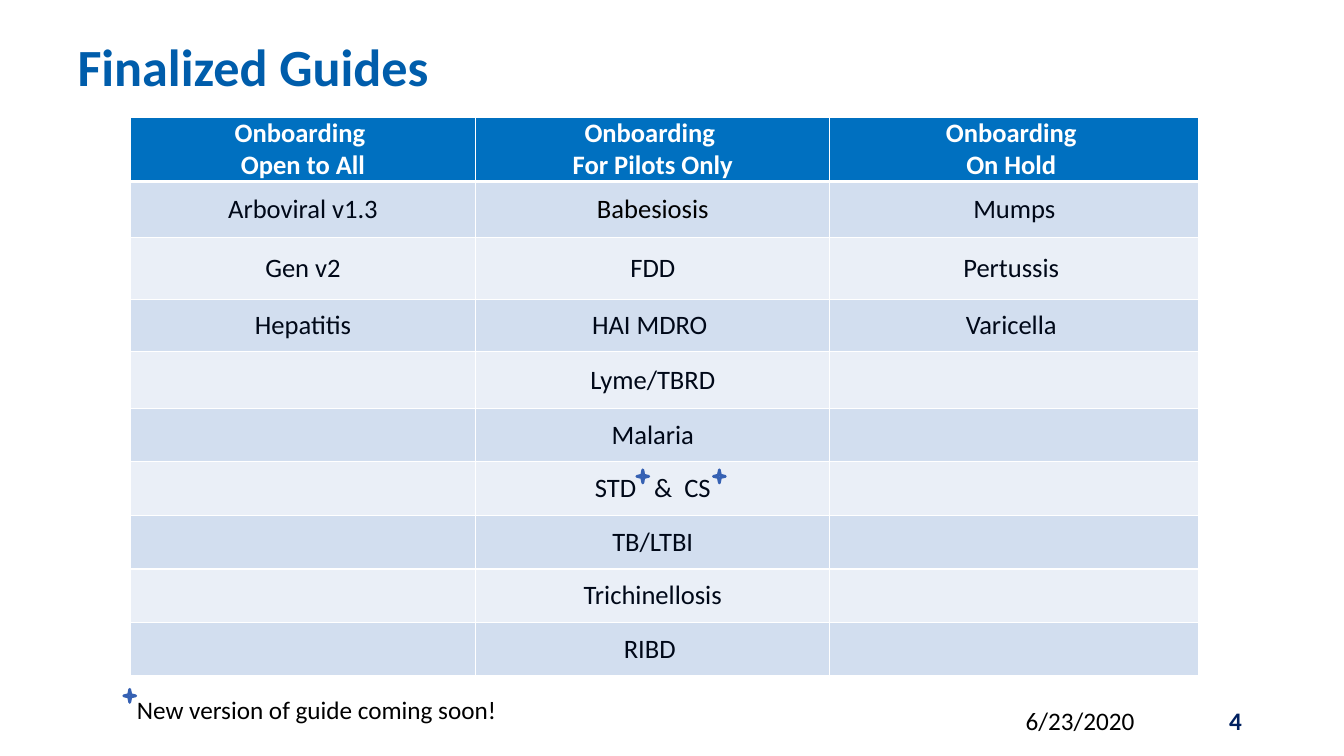
import pptx
import pptx.dml.color
import pptx.enum.shapes
import pptx.enum.text
import pptx.oxml
import pptx.oxml.ns
import pptx.util
from pptx.util import Cm, Pt

PP_ALIGN = pptx.enum.text.PP_ALIGN
ANCHOR = pptx.enum.text.MSO_ANCHOR
FONT = "Calibri"
COLORS = {
    "title": "005DAB", "header": "0070C0", "band_dark": "D2DEEF",
    "band_light": "EAEFF7", "white": "FFFFFF", "ink": "000818",
    "black": "000000", "navy": "002060", "star": "4983F2", "star_edge": "3661B3",
}
HEADERS = ["Onboarding \nOpen to All", "Onboarding \nFor Pilots Only", "Onboarding \nOn Hold "]
GUIDES = [
    ["Arboviral v1.3", "Gen v2", "Hepatitis"],
    ["Babesiosis", "FDD", "HAI MDRO ", "Lyme/TBRD", "Malaria", "STD & CS",
     "TB/LTBI", "Trichinellosis", "RIBD "],
    ["Mumps", "Pertussis ", "Varicella "],
]
COLUMN_WIDTHS = [8.71, 8.92, 9.3]
ROW_HEIGHTS = [1.61, 1.4, 1.57, 1.32, 1.42] + [1.35] * 5


def rgb(name):
    return pptx.dml.color.RGBColor.from_string(COLORS[name])


def style_runs(paragraph, size, color, bold=False):
    for run in paragraph.runs:
        run.font.name = FONT
        run.font.size = Pt(size)
        run.font.bold = bold
        run.font.color.rgb = rgb(color)


def add_title(slide, left, top, width, height):
    title = slide.shapes.title
    title.left, title.top, title.width, title.height = Cm(left), Cm(top), Cm(width), Cm(height)
    frame = title.text_frame
    frame.text = "Finalized Guides"
    frame.auto_size = pptx.enum.text.MSO_AUTO_SIZE.NONE
    frame.vertical_anchor = ANCHOR.BOTTOM
    heading = frame.paragraphs[0]
    heading.alignment = PP_ALIGN.LEFT
    heading.line_spacing = Pt(40)
    style_runs(heading, 37.3, "title", bold=True)


def set_borders(cell, top, bottom):
    """Draw white cell borders; top and bottom are widths in points."""
    properties = cell._tc.get_or_add_tcPr()
    for position, (side, width) in enumerate(
            [("lnL", 1), ("lnR", 1), ("lnT", top), ("lnB", bottom)]):
        properties.insert(position, pptx.oxml.parse_xml(
            f'<a:{side} {pptx.oxml.ns.nsdecls("a")} w="{Pt(width)}"><a:solidFill>'
            f'<a:srgbClr val="{COLORS["white"]}"/></a:solidFill></a:{side}>'))


def fill_cell(cell, text, row):
    is_header = row == 0
    cell.fill.solid()
    cell.fill.fore_color.rgb = rgb(
        "header" if is_header else "band_dark" if row % 2 else "band_light")
    set_borders(cell, 3 if row == 1 else 1, 3 if is_header else 1)
    cell.vertical_anchor = ANCHOR.MIDDLE
    cell.margin_top = cell.margin_bottom = 0
    cell.text_frame.text = text
    for paragraph in cell.text_frame.paragraphs:
        paragraph.alignment = PP_ALIGN.CENTER
        style_runs(paragraph, 19, "white" if is_header else "ink", is_header)


def leave_room_for_stars(paragraph):
    """Widen the spaces around the ampersand by character spacing."""
    paragraph.clear()
    for text, spacing in [("STD", 0), (" ", 860), ("&", 0), (" ", 430), ("CS", 0)]:
        run = paragraph.add_run()
        run.text = text
        run.font._element.set("spc", str(spacing))
    style_runs(paragraph, 19, "ink")


def add_star(slide, left, top):
    star = slide.shapes.add_shape(
        pptx.enum.shapes.MSO_SHAPE.STAR_4_POINT, Cm(left), Cm(top), Cm(0.3), Cm(0.33))
    star.shadow.inherit = False
    star.fill.solid()
    star.fill.fore_color.rgb = rgb("star")
    star.line.color.rgb = rgb("star_edge")
    star.line.width = Pt(2)


def add_guides_table(slide, left, top):
    guides = slide.shapes.add_table(
        len(ROW_HEIGHTS), len(COLUMN_WIDTHS), Cm(left), Cm(top),
        Cm(sum(COLUMN_WIDTHS)), Cm(sum(ROW_HEIGHTS))).table
    for row, height in enumerate(ROW_HEIGHTS):
        guides.rows[row].height = Cm(height)
    for column, width in enumerate(COLUMN_WIDTHS):
        guides.columns[column].width = Cm(width)
        entries = [HEADERS[column]] + GUIDES[column]
        for row in range(len(ROW_HEIGHTS)):
            text = entries[row] if row < len(entries) else ""
            fill_cell(guides.cell(row, column), text, row)
    std_row = GUIDES[1].index("STD & CS") + 1
    leave_room_for_stars(guides.cell(std_row, 1).text_frame.paragraphs[0])
    babesiosis = guides.cell(1, 1).text_frame.paragraphs[0]
    style_runs(babesiosis, 19, "black")
    for offset in (12.77, 14.7):
        add_star(slide, left + offset, top + 8.89)


def add_label(slide, text, left, top, width, color="black", bold=False,
              align=PP_ALIGN.LEFT, inset=0.25):
    label = slide.shapes.add_textbox(Cm(left), Cm(top), Cm(width), Cm(1.02))
    frame = label.text_frame
    frame.word_wrap = True
    frame.margin_left = Cm(inset)
    frame.text = text
    frame.paragraphs[0].alignment = align
    style_runs(frame.paragraphs[0], 18, color, bold)
    return frame


def add_footnote(slide, left, top, width):
    add_label(slide, "New version of guide coming soon!", left, top, width, inset=0.83)
    add_star(slide, left + 0.5, top)


def add_footer(slide, left, top, width):
    number = add_label(slide, "4", left, top, width, "navy", True, PP_ALIGN.RIGHT)
    number.vertical_anchor = ANCHOR.MIDDLE
    add_label(slide, "6/23/2020", left + 1.67, top, 4.27)


def main():
    deck = pptx.Presentation()
    deck.slide_width, deck.slide_height = Cm(33.87), Cm(19.05)
    slide = deck.slides.add_slide(deck.slide_layouts[5])
    add_title(slide, 1.7, 0.76, 30.48, 1.8)
    add_guides_table(slide, 3.28, 2.95)
    add_footer(slide, 23.93, 17.65, 7.62)
    add_footnote(slide, 2.62, 17.37, 14.33)
    deck.save("out.pptx")


if __name__ == "__main__":
    main()
